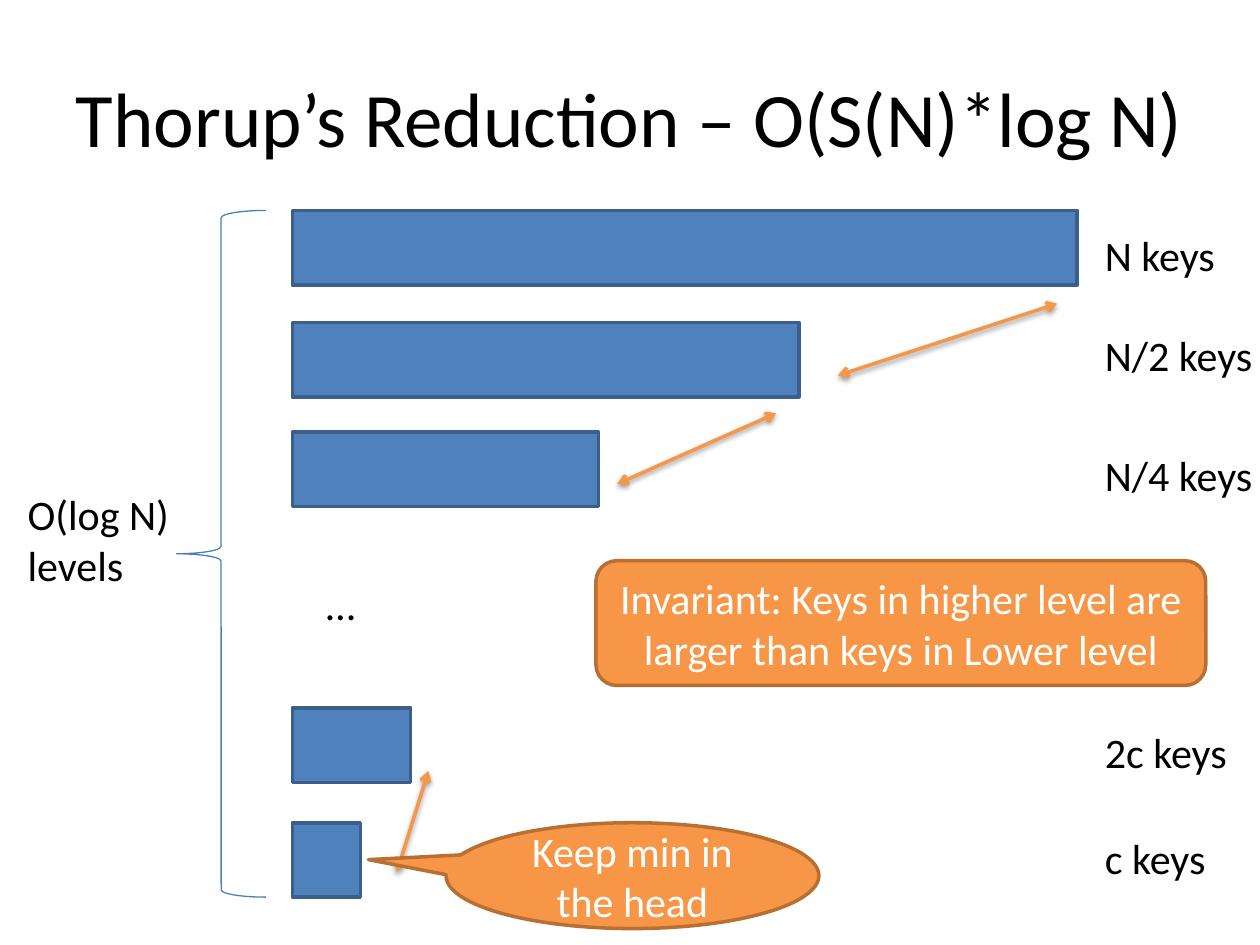
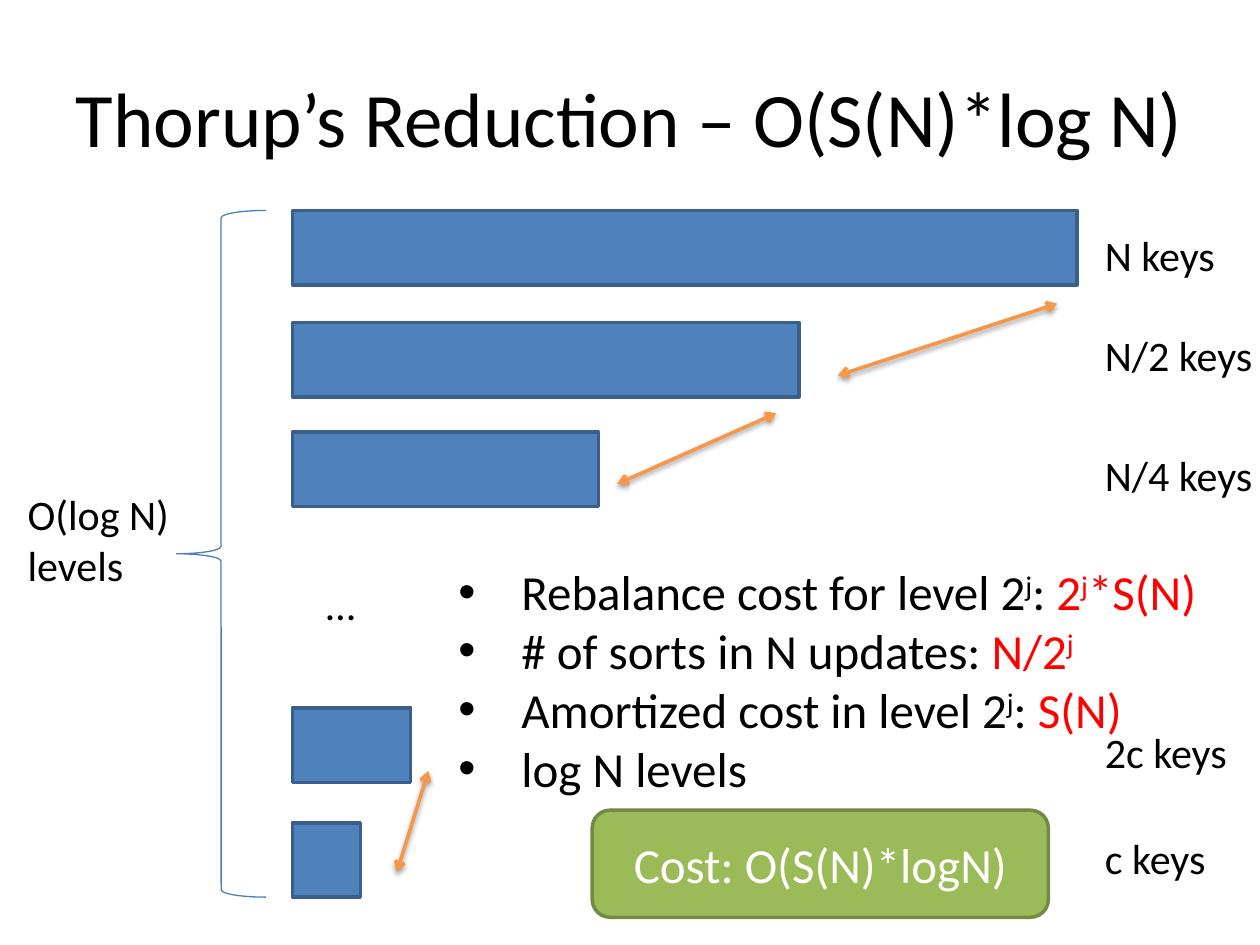
from lxml import etree
from pptx import Presentation
from pptx.dml.color import RGBColor
from pptx.enum.shapes import MSO_CONNECTOR, MSO_SHAPE
from pptx.enum.text import MSO_ANCHOR, PP_ALIGN
from pptx.oxml import parse_xml
from pptx.oxml.ns import nsdecls, qn
from pptx.util import Inches, Pt

BLACK, WHITE, RED = "000000", "FFFFFF", "FF0000"
BLUE, BLUE_EDGE, BRACE_BLUE = "4F81BD", "3A5F8C", "4B7EBC"
ORANGE, ORANGE_EDGE = "F79646", "B76F34"
GREEN, GREEN_EDGE = "9BBB59", "738A42"

BAR_LEFT, BAR_HEIGHT, LABEL_LEFT = 2.32, 0.59, 8.67
# Each level: bar top, bar width, label top, label width, label
LEVELS = [
    (1.67, 6.23, 1.77, 1.08, "N keys"),
    (2.56, 4.02, 2.57, 1.38, "N/2 keys"),
    (3.43, 2.43, 3.52, 1.38, "N/4 keys"),
    (5.62, 0.94, 5.72, 1.18, "2c keys"),
    (6.53, 0.54, 6.56, 1.01, "c keys"),
]
EXCHANGES = [
    ((8.39, 2.41), (6.65, 2.98)),
    ((6.16, 3.28), (4.9, 3.84)),
    ((3.4, 6.12), (3.15, 6.92)),
]
# Each bullet: runs of text, colour, superscript
COSTS = [
    [("Rebalance cost for level 2", BLACK, False), ("j", BLACK, True),
     (": ", BLACK, False), ("2", RED, False), ("j", RED, True),
     ("*S(N)", RED, False)],
    [("# of sorts in N updates: ", BLACK, False), ("N/2", RED, False),
     ("j", RED, True)],
    [("Amortized cost in level 2", BLACK, False), ("j", BLACK, True),
     (": ", BLACK, False), ("S(N)", RED, False)],
    [("log N levels", BLACK, False)],
]


def rgb(value):
    return RGBColor.from_string(value)


def inches(values):
    return [Inches(value) for value in values]


class Deck:
    font_name = "Calibri"

    def __init__(self):
        self.prs = Presentation()
        self.prs.slide_width, self.prs.slide_height = inches((10, 7.5))
        self.slide = None

    def new_slide(self):
        self.slide = self.prs.slides.add_slide(self.prs.slide_layouts[6])

    def add_run(self, paragraph, text, size, color, raised=False):
        run = paragraph.add_run()
        run.text = text
        for name, value in {"name": self.font_name, "size": Pt(size)}.items():
            setattr(run.font, name, value)
        run.font.color.rgb = rgb(color)
        if raised:
            run._r.get_or_add_rPr().set("baseline", "30000")

    def fill_frame(self, frame, lines, size, color, centred=False):
        """Fill a frame with lines, each a string or a list of runs."""
        for index, line in enumerate(lines):
            paragraph = frame.paragraphs[0] if index == 0 else frame.add_paragraph()
            paragraph.alignment = PP_ALIGN.CENTER if centred else PP_ALIGN.LEFT
            runs = [(line, color, False)] if isinstance(line, str) else line
            for text, run_color, raised in runs:
                self.add_run(paragraph, text, size, run_color, raised)
        if centred:
            frame.vertical_anchor = MSO_ANCHOR.MIDDLE

    def text(self, box, *lines, size=24, wrap=False, centred=False):
        frame = self.slide.shapes.add_textbox(*inches(box)).text_frame
        frame.word_wrap = wrap
        self.fill_frame(frame, lines, size, BLACK, centred)
        return frame

    def bullets(self, box, lines, size):
        frame = self.text(box, *lines, size=size, wrap=True)
        for paragraph in frame.paragraphs:
            properties = paragraph._p.get_or_add_pPr()
            for name, value in {"marL": 0.5, "indent": -0.5}.items():
                properties.set(name, str(Inches(value)))
            etree.SubElement(properties, qn("a:buFont"), typeface="Arial")
            etree.SubElement(properties, qn("a:buChar"), char="•")

    def shape(self, kind, box, fill, edge, width=2, text=None, size=24, adjust=()):
        shape = self.slide.shapes.add_shape(kind, *inches(box))
        shape.shadow.inherit = False
        if fill:
            shape.fill.solid()
            shape.fill.fore_color.rgb = rgb(fill)
        else:
            shape.fill.background()
        shape.line.color.rgb = rgb(edge)
        shape.line.width = Pt(width)
        for index, value in enumerate(adjust):
            shape.adjustments[index] = value
        if text:
            shape.text_frame.word_wrap = True
            self.fill_frame(shape.text_frame, [text], size, WHITE, centred=True)

    def double_arrow(self, start, end):
        arrow = self.slide.shapes.add_connector(
            MSO_CONNECTOR.STRAIGHT, *inches(start + end))
        arrow.line.color.rgb = rgb(ORANGE)
        arrow.line.width = Pt(2)
        outline = arrow.line._get_or_add_ln()
        for tip in ("a:headEnd", "a:tailEnd"):
            etree.SubElement(outline, qn(tip), type="arrow")
        # Soft shadow straight below the arrow
        arrow._element.spPr.append(parse_xml(
            f'<a:effectLst {nsdecls("a")}>'
            f'<a:outerShdw blurRad="{Pt(3.1)}" dist="{Pt(1.6)}" dir="5400000" '
            'rotWithShape="0"><a:srgbClr val="000000"><a:alpha val="38000"/>'
            '</a:srgbClr></a:outerShdw></a:effectLst>'))

    def level_diagram(self):
        """Start a slide with the title and the hierarchy of levels."""
        self.new_slide()
        self.text((0.5, 0.3, 9, 1.25), "Thorup’s Reduction – O(S(N)*log N)",
                  size=44, wrap=True, centred=True)

        # Levels and their key counts
        for bar_top, bar_width, label_top, label_width, label in LEVELS:
            self.shape(MSO_SHAPE.RECTANGLE,
                       (BAR_LEFT, bar_top, bar_width, BAR_HEIGHT), BLUE, BLUE_EDGE)
            self.text((LABEL_LEFT, label_top, label_width, 0.5), label)
        self.text((2.49, 4.54, 0.44, 0.5), "…")

        # Number of levels
        self.shape(MSO_SHAPE.LEFT_BRACE, (1.4, 1.67, 0.71, 5.45),
                   None, BRACE_BLUE, width=0.75)
        self.text((0.12, 3.83, 1.41, 0.91), "O(log N)", "levels")

        # Exchanges between neighbouring levels
        for start, end in EXCHANGES:
            self.double_arrow(start, end)


def main():
    deck = Deck()

    # Slide 1: invariant
    deck.level_diagram()
    deck.shape(MSO_SHAPE.OVAL_CALLOUT, (3.54, 6.53, 2.96, 0.84), ORANGE, ORANGE_EDGE,
               text="Keep min in the head", adjust=(-0.708, -0.151))
    deck.shape(MSO_SHAPE.ROUNDED_RECTANGLE, (4.73, 4.45, 4.84, 0.99),
               ORANGE, ORANGE_EDGE,
               text="Invariant: Keys in higher level are larger than keys in Lower level")

    # Slide 2: cost
    deck.level_diagram()
    deck.bullets((3.54, 4.41, 6.22, 2.46), COSTS, size=28)
    deck.shape(MSO_SHAPE.ROUNDED_RECTANGLE, (4.7, 6.43, 3.62, 0.85),
               GREEN, GREEN_EDGE, text="Cost: O(S(N)*logN)", size=28)

    deck.prs.save("out.pptx")


if __name__ == "__main__":
    main()
